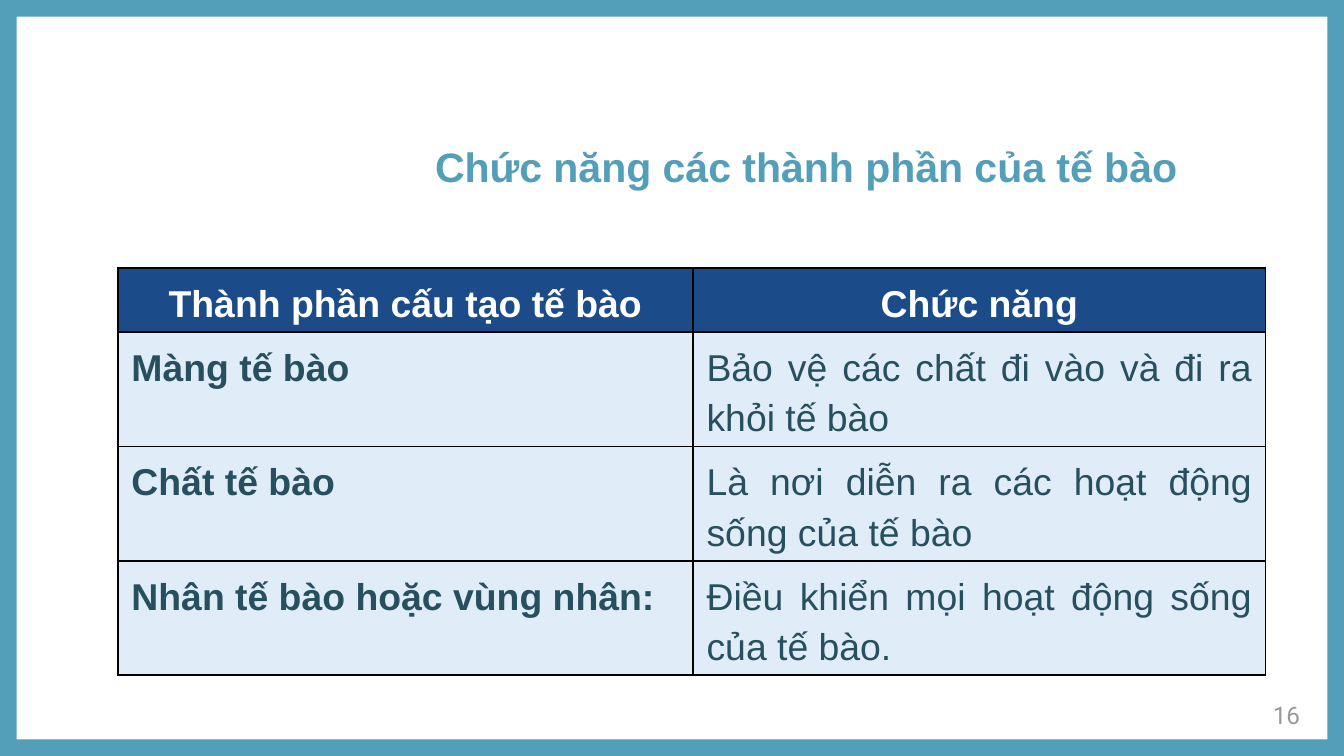
from lxml import etree
from pptx import Presentation
from pptx.dml.color import RGBColor
from pptx.enum.shapes import MSO_SHAPE
from pptx.enum.text import MSO_ANCHOR, PP_ALIGN
from pptx.oxml.ns import qn
from pptx.util import Cm, Pt

FRAME = MSO_SHAPE.FRAME
TOP, BOTTOM = MSO_ANCHOR.TOP, MSO_ANCHOR.BOTTOM
CENTER, RIGHT, JUSTIFY = PP_ALIGN.CENTER, PP_ALIGN.RIGHT, PP_ALIGN.JUSTIFY

COLORS = {
    "teal": "539EB9",
    "header": "1B4C89",
    "body": "E1ECF9",
    "ink": "27505F",
    "white": "FFFFFF",
    "grey": "999999",
    "border": "000000",
}

HEADINGS = ("Thành phần cấu tạo tế bào", "Chức năng")
FUNCTIONS = [
    ("Màng tế bào", "Bảo vệ các chất đi vào và đi ra khỏi tế bào"),
    ("Chất tế bào", "Là nơi diễn ra các hoạt động sống của tế bào"),
    ("Nhân tế bào hoặc vùng nhân:", "Điều khiển mọi hoạt động sống của tế bào."),
]

CELL_SPACING = {"line_spacing": Pt(27), "space_after": Pt(2)}
BOX_MARGINS = ("margin_left", "margin_top", "margin_right", "margin_bottom")


def rgb(color):
    return RGBColor.from_string(COLORS[color])


def apply(target, values):
    for name, value in values.items():
        setattr(target, name, value)


def write(frame, text, color, align, font, spacing=None):
    paragraph = frame.paragraphs[0]
    apply(paragraph, {"alignment": align, **(spacing or {})})
    run = paragraph.add_run()
    run.text = text
    apply(run.font, font)
    run.font.color.rgb = rgb(color)


def add_page_frame(slide, width, height):
    border = slide.shapes.add_shape(FRAME, 0, 0, width, height)
    border.adjustments[0] = 0.022
    border.shadow.inherit = False
    border.fill.solid()
    border.fill.fore_color.rgb = rgb("teal")
    border.line.fill.background()


def add_label(slide, box, text, color, align, anchor, font):
    frame = slide.shapes.add_textbox(*map(Cm, box)).text_frame
    apply(frame, {"word_wrap": True, "vertical_anchor": anchor})
    apply(frame, {margin: Cm(0.25) for margin in BOX_MARGINS})
    write(frame, text, color, align, font)


def outline_cell(cell):
    properties = cell._tc.get_or_add_tcPr()
    for position, side in enumerate(("a:lnL", "a:lnR", "a:lnT", "a:lnB")):
        line = etree.Element(qn(side), w=str(Pt(1)))
        fill = etree.SubElement(line, qn("a:solidFill"))
        etree.SubElement(fill, qn("a:srgbClr"), val=COLORS["border"])
        properties.insert(position, line)


def fill_cell(cell, text, fill, color, align, bold):
    cell.fill.solid()
    cell.fill.fore_color.rgb = rgb(fill)
    outline_cell(cell)
    font = {"name": "Arial", "size": Pt(20), "bold": bold}
    write(cell.text_frame, text, color, align, font, CELL_SPACING)


def add_function_table(slide):
    rows = [HEADINGS, *FUNCTIONS]
    table = slide.shapes.add_table(
        len(rows), 2, Cm(2.23), Cm(5.07), Cm(21.69), Cm(7.68)
    ).table
    for column, width in zip(table.columns, (10.87, 10.82)):
        column.width = Cm(width)
    for r, texts in enumerate(rows):
        is_header = r == 0
        table.rows[r].height = Cm(1.2 if is_header else 2.16)
        for c, text in enumerate(texts):
            if is_header:
                style = ("header", "white", CENTER, True)
            else:
                style = ("body", "ink", JUSTIFY, c == 0)
            fill_cell(table.cell(r, c), text, *style)


def main():
    deck = Presentation()
    deck.slide_width, deck.slide_height = Cm(25.4), Cm(14.29)
    slide = deck.slides.add_slide(deck.slide_layouts[6])

    # Border around the page
    add_page_frame(slide, deck.slide_width, deck.slide_height)

    # Title and page number
    add_label(slide, (5.41, 2.46, 19.66, 1.4),
              "Chức năng các thành phần của tế bào", "teal", CENTER, BOTTOM,
              {"name": "Arial", "size": Pt(22), "bold": True})
    add_label(slide, (23.55, 12.98, 1.27, 1.09), "16", "grey", RIGHT, TOP,
              {"name": "Roboto", "size": Pt(13)})

    # Cell parts and what they do
    add_function_table(slide)

    deck.save("out.pptx")


if __name__ == "__main__":
    main()
